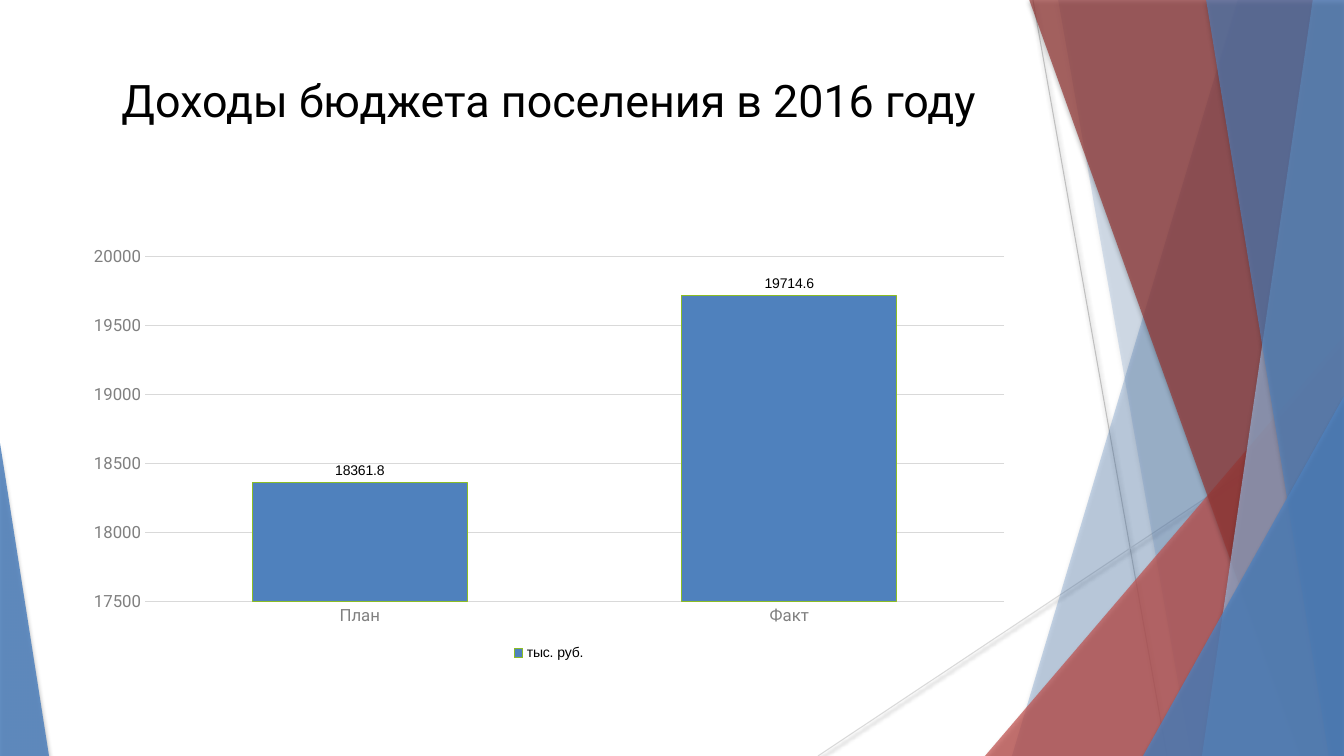
from lxml import etree
from pptx import Presentation
from pptx import util as u
from pptx.chart.data import CategoryChartData
from pptx.dml.color import RGBColor
from pptx.enum import chart as ch, shapes, text
from pptx.oxml import parse_xml
from pptx.oxml.ns import nsdecls, qn

WIDTH, HEIGHT = 1344, 756
TOP = -1
BLUE, RED, DARK_RED, PALE_BLUE = "4F81BD", "C0504D", "953735", "95B3D7"
GRID, GREY, BLACK, GREEN = "D9D9D9", "808080", "000000", "8CBD25"


def px(value):
    return u.Emu(round(value * 914400 / 100.8))


def color(hex_code):
    return RGBColor.from_string(hex_code)


def style_font(font, size, hex_code, name):
    font.size = u.Pt(size)
    font.name = name
    font.color.rgb = color(hex_code)


def style_line(line, hex_code):
    line.color.rgb = color(hex_code)
    line.width = u.Pt(0.75)


def write(frame, content, align=text.PP_ALIGN.LEFT, **font_format):
    paragraph = frame.paragraphs[0]
    paragraph.alignment = align
    run = paragraph.add_run()
    run.text = content
    style_font(run.font, **font_format)


class BudgetSlide:
    """The current slide and its fonts, with a method per kind of element."""

    heading_font = "Roboto"
    chart_font = "Arial"

    def __init__(self, presentation):
        self.slide = presentation.slides.add_slide(presentation.slide_layouts[5])
        self.shapes = self.slide.shapes

    def shadow(self, shape, alpha=35, blur=3.0, distance=2.0):
        properties = shape._element.spPr
        for effects in properties.findall(qn("a:effectLst")):
            properties.remove(effects)
        properties.append(parse_xml(
            f'<a:effectLst {nsdecls("a")}><a:outerShdw blurRad="{u.Pt(blur)}" '
            f'dist="{u.Pt(distance)}" dir="5400000" algn="ctr" rotWithShape="0">'
            f'<a:srgbClr val="{BLACK}"><a:alpha val="{alpha * 1000}"/></a:srgbClr>'
            f'</a:outerShdw></a:effectLst>'))

    def paint(self, shape, hex_code, opacity):
        shape.fill.solid()
        shape.fill.fore_color.rgb = color(hex_code)
        fill_color = shape._element.spPr.find(qn("a:solidFill"))[0]
        etree.SubElement(fill_color, qn("a:alpha"), val=str(opacity * 1000))
        shape.line.fill.background()
        self.shadow(shape)

    def line(self, start, end, hex_code):
        connector = self.shapes.add_connector(
            shapes.MSO_CONNECTOR.STRAIGHT, *map(px, (*start, *end)))
        style_line(connector.line, hex_code)
        self.shadow(connector, alpha=38, blur=3.1, distance=1.6)

    def band(self, top_left, bottom_left, hex_code, opacity):
        """A full-height band that reaches the right edge of the slide."""
        builder = self.shapes.build_freeform(px(top_left), px(TOP))
        corners = [(WIDTH, TOP), (WIDTH, HEIGHT), (bottom_left, HEIGHT)]
        builder.add_line_segments([(px(x), px(y)) for x, y in corners], close=True)
        self.paint(builder.convert_to_shape(), hex_code, opacity)

    def triangle(self, left, top, right, apex, hex_code, opacity):
        """A triangle standing on the bottom edge of the slide."""
        shape = self.shapes.add_shape(
            shapes.MSO_SHAPE.ISOSCELES_TRIANGLE,
            px(left), px(top), px(right - left), px(HEIGHT - top))
        shape.adjustments[0] = apex
        self.paint(shape, hex_code, opacity)

    def title(self, content, left, top, width, height):
        title = self.shapes.title
        title.left, title.top, title.width, title.height = map(
            px, (left, top, width, height))
        title.text_frame.vertical_anchor = text.MSO_ANCHOR.TOP
        title.text_frame.auto_size = text.MSO_AUTO_SIZE.NONE
        write(title.text_frame, content, align=text.PP_ALIGN.CENTER,
              size=32, hex_code=BLACK, name=self.heading_font)
        # Bring the title in front of the decoration
        self.shapes._spTree.append(title._element)

    def axis(self, axis):
        axis.major_tick_mark = axis.minor_tick_mark = ch.XL_TICK_MARK.NONE
        style_font(axis.tick_labels.font, 12, GREY, self.heading_font)

    def column_chart(self, categories, name, values, left, top, width, height):
        data = CategoryChartData()
        data.categories = categories
        data.add_series(name, values)
        chart = self.shapes.add_chart(
            ch.XL_CHART_TYPE.COLUMN_CLUSTERED,
            *map(px, (left, top, width, height)), data).chart
        style_font(chart.font, 10, BLACK, self.chart_font)
        chart.has_title = False
        chart.has_legend = True
        chart.legend.position = ch.XL_LEGEND_POSITION.BOTTOM
        chart.legend.include_in_layout = False

        self.axis(chart.category_axis)
        style_line(chart.category_axis.format.line, GRID)
        value_axis = chart.value_axis
        self.axis(value_axis)
        value_axis.format.line.fill.background()
        style_line(value_axis.major_gridlines.format.line, GRID)
        value_axis.minimum_scale, value_axis.maximum_scale = 17500, 20000
        value_axis.major_unit = 500

        plot = chart.plots[0]
        plot.gap_width, plot.overlap = 100, -24
        plot.vary_by_categories = False
        series = plot.series[0]
        series.format.fill.solid()
        series.format.fill.fore_color.rgb = color(BLUE)
        style_line(series.format.line, GREEN)
        labels = series.data_labels
        labels.show_value = True
        labels.position = ch.XL_LABEL_POSITION.OUTSIDE_END
        style_font(labels.font, 10, BLACK, self.chart_font)


def main():
    presentation = Presentation()
    presentation.slide_width, presentation.slide_height = px(WIDTH), px(HEIGHT)
    slide = BudgetSlide(presentation)

    slide.line((1033, 0), (1167, HEIGHT), "BFBFBF")
    slide.line((WIDTH, 406), (818, HEIGHT), GRID)
    slide.band(1238, 1012, BLUE, 30)
    slide.band(1058, 1191, BLUE, 20)
    slide.triangle(985, 336, WIDTH, 1, RED, 72)
    slide.band(1029, 1301, DARK_RED, 70)
    slide.band(1313, 1202, PALE_BLUE, 70)
    slide.band(1206, 1329, BLUE, 65)
    slide.triangle(1143, 396, WIDTH, 1, BLUE, 80)
    slide.triangle(0, 443, 49, 0, BLUE, 85)

    slide.title("Доходы бюджета поселения в 2016 году", 75, 68, 948, 145)
    slide.column_chart(["План", "Факт"], "тыс. руб.", [18361.8, 19714.6],
                       75, 238, 948, 427)
    presentation.save("out.pptx")


if __name__ == "__main__":
    main()
